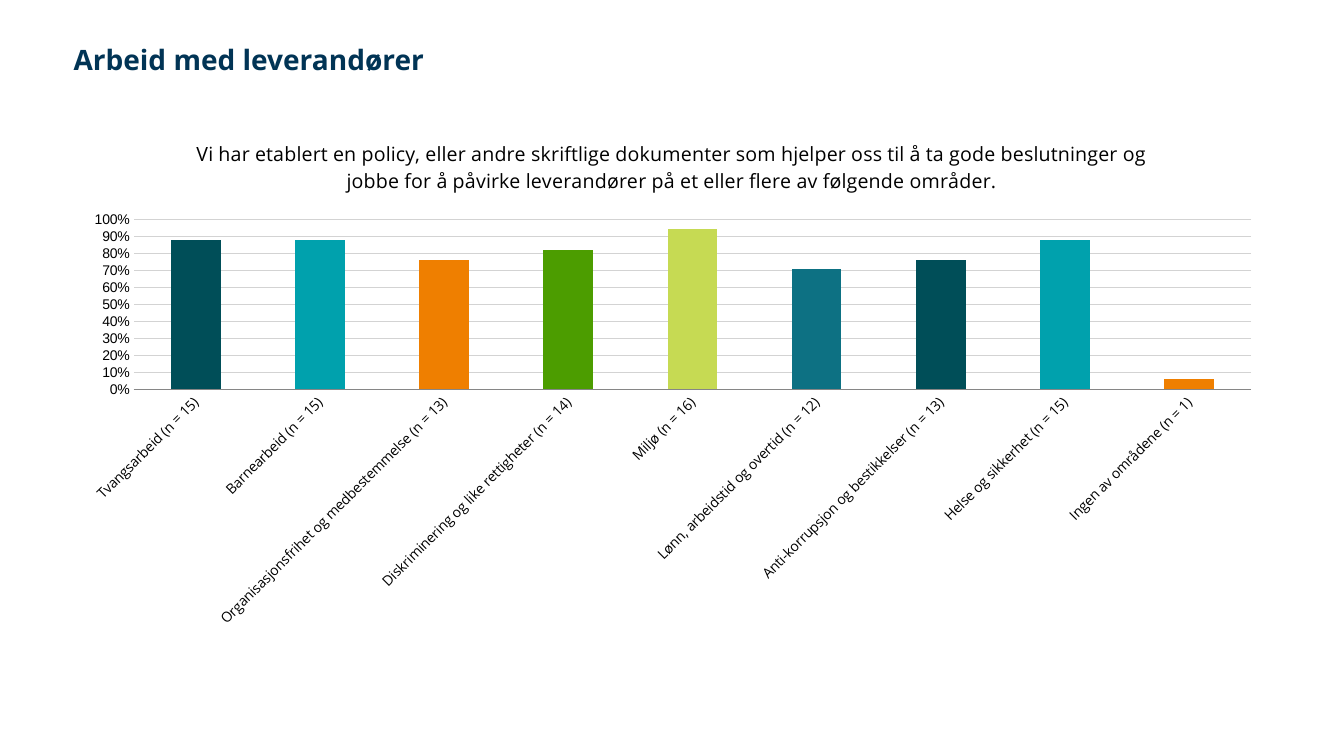
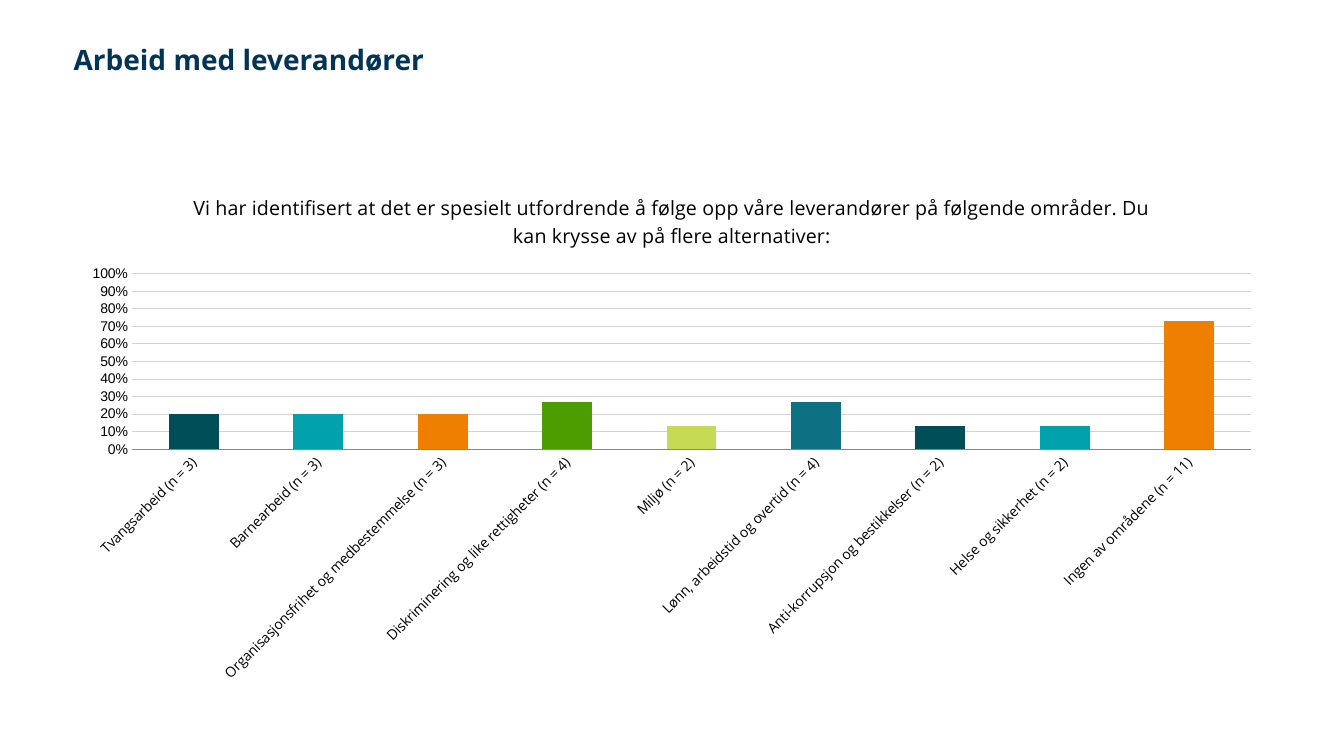
from dataclasses import dataclass

from pptx import Presentation
from pptx.chart.chart import Chart
from pptx.chart.data import CategoryChartData
from pptx.dml.color import RGBColor
from pptx.enum.chart import XL_CHART_TYPE, XL_TICK_MARK
from pptx.enum.text import MSO_ANCHOR, MSO_AUTO_SIZE, PP_ALIGN
from pptx.presentation import Presentation as Deck
from pptx.slide import Slide
from pptx.text.text import Font
from pptx.util import Inches, Pt

TITLE_ONLY = 5
TITLE = "Arbeid med leverandører"
FONT, NUMBER_FONT = "Open Sans", "Arial"
NAVY, BLACK, GRID, AXIS = "013455", "000000", "D3D3D3", "868686"
BAR_COLOURS = ["004E58", "00A1AD", "EF7F00", "4C9D00", "C6DA53", "0D7183"]
CONTENT_WIDTH = Inches(11.97)
AREAS = [
    "Tvangsarbeid",
    "Barnearbeid",
    "Organisasjonsfrihet og medbestemmelse",
    "Diskriminering og like rettigheter",
    "Miljø",
    "Lønn, arbeidstid og overtid",
    "Anti-korrupsjon og bestikkelser",
    "Helse og sikkerhet",
    "Ingen av områdene",
]


@dataclass(frozen=True)
class Question:
    text: str
    top: float
    counts: list[int]
    shares: list[float]


QUESTIONS = [
    Question(
        "Vi har etablert en policy, eller andre skriftlige dokumenter som hjelper oss "
        "til å ta gode beslutninger og jobbe for å påvirke leverandører på et eller "
        "flere av følgende områder.",
        1.18,
        [15, 15, 13, 14, 16, 12, 13, 15, 1],
        [0.88, 0.88, 0.76, 0.82, 0.94, 0.71, 0.76, 0.88, 0.06],
    ),
    Question(
        "Vi har identifisert at det er spesielt utfordrende å følge opp våre "
        "leverandører på følgende områder. Du kan krysse av på flere alternativer:",
        1.72,
        [3, 3, 3, 4, 2, 4, 2, 2, 11],
        [0.2, 0.2, 0.2, 0.27, 0.13, 0.27, 0.13, 0.13, 0.73],
    ),
]


def rgb(colour: str) -> RGBColor:
    return RGBColor.from_string(colour)


def style_font(font: Font, size: float, name: str = FONT,
               colour: str = BLACK, bold: bool = False) -> None:
    font.name, font.size, font.bold = name, Pt(size), bold
    font.color.rgb = rgb(colour)


def add_title(s: Slide) -> None:
    sp = s.shapes.title
    sp.left, sp.top = Inches(0.63), Inches(0.42)
    sp.width, sp.height = CONTENT_WIDTH, Inches(0.39)
    tf = sp.text_frame
    tf.text = TITLE
    tf.word_wrap = True
    tf.auto_size = MSO_AUTO_SIZE.NONE
    tf.vertical_anchor = MSO_ANCHOR.MIDDLE
    p = tf.paragraphs[0]
    p.alignment, p.line_spacing = PP_ALIGN.LEFT, 0.8
    style_font(p.runs[0].font, 20, colour=NAVY, bold=True)


def style_axes(chart: Chart) -> None:
    areas, shares = chart.category_axis, chart.value_axis
    for axis, name in ((areas, FONT), (shares, NUMBER_FONT)):
        axis.major_tick_mark = axis.minor_tick_mark = XL_TICK_MARK.NONE
        style_font(axis.tick_labels.font, 10, name)
    areas.format.line.color.rgb = rgb(AXIS)
    areas.format.line.width = Pt(0.75)
    # Slant the category labels upwards by 45 degrees
    body = areas._element.txPr.bodyPr
    body.set("rot", "-2700000")
    body.set("vert", "horz")

    shares.minimum_scale, shares.maximum_scale, shares.major_unit = 0, 1, 0.1
    shares.tick_labels.number_format = "0%"
    shares.tick_labels.number_format_is_linked = False
    shares.format.line.fill.background()
    shares.has_major_gridlines = True
    line = shares.major_gridlines.format.line
    line.color.rgb, line.width = rgb(GRID), Pt(0.75)


def add_question_chart(s: Slide, question: Question) -> None:
    data = CategoryChartData(number_format="0%")
    data.categories = [f"{area} (n = {n})" for area, n in zip(AREAS, question.counts)]
    data.add_series("Series 1", question.shares)
    chart = s.shapes.add_chart(
        XL_CHART_TYPE.COLUMN_CLUSTERED, Inches(0.68), Inches(question.top),
        CONTENT_WIDTH, Inches(5.15), data).chart
    style_font(chart.font, 18, NUMBER_FONT)
    chart.has_legend = False

    chart.has_title = True
    tf = chart.chart_title.text_frame
    tf.text = question.text
    style_font(tf.paragraphs[0].runs[0].font, 14)
    chart.chart_title.include_in_layout = False
    style_axes(chart)

    plot = chart.plots[0]
    plot.gap_width, plot.vary_by_categories = 150, False
    series = plot.series[0]
    for i in range(len(AREAS)):
        fill = series.points[i].format.fill
        fill.solid()
        fill.fore_color.rgb = rgb(BAR_COLOURS[i % len(BAR_COLOURS)])


def add_question_slide(prs: Deck, question: Question) -> None:
    s = prs.slides.add_slide(prs.slide_layouts[TITLE_ONLY])
    add_question_chart(s, question)
    add_title(s)


def main() -> None:
    prs = Presentation()
    prs.slide_width, prs.slide_height = Inches(13.33), Inches(7.5)
    for question in QUESTIONS:
        add_question_slide(prs, question)
    prs.save("out.pptx")


if __name__ == "__main__":
    main()
